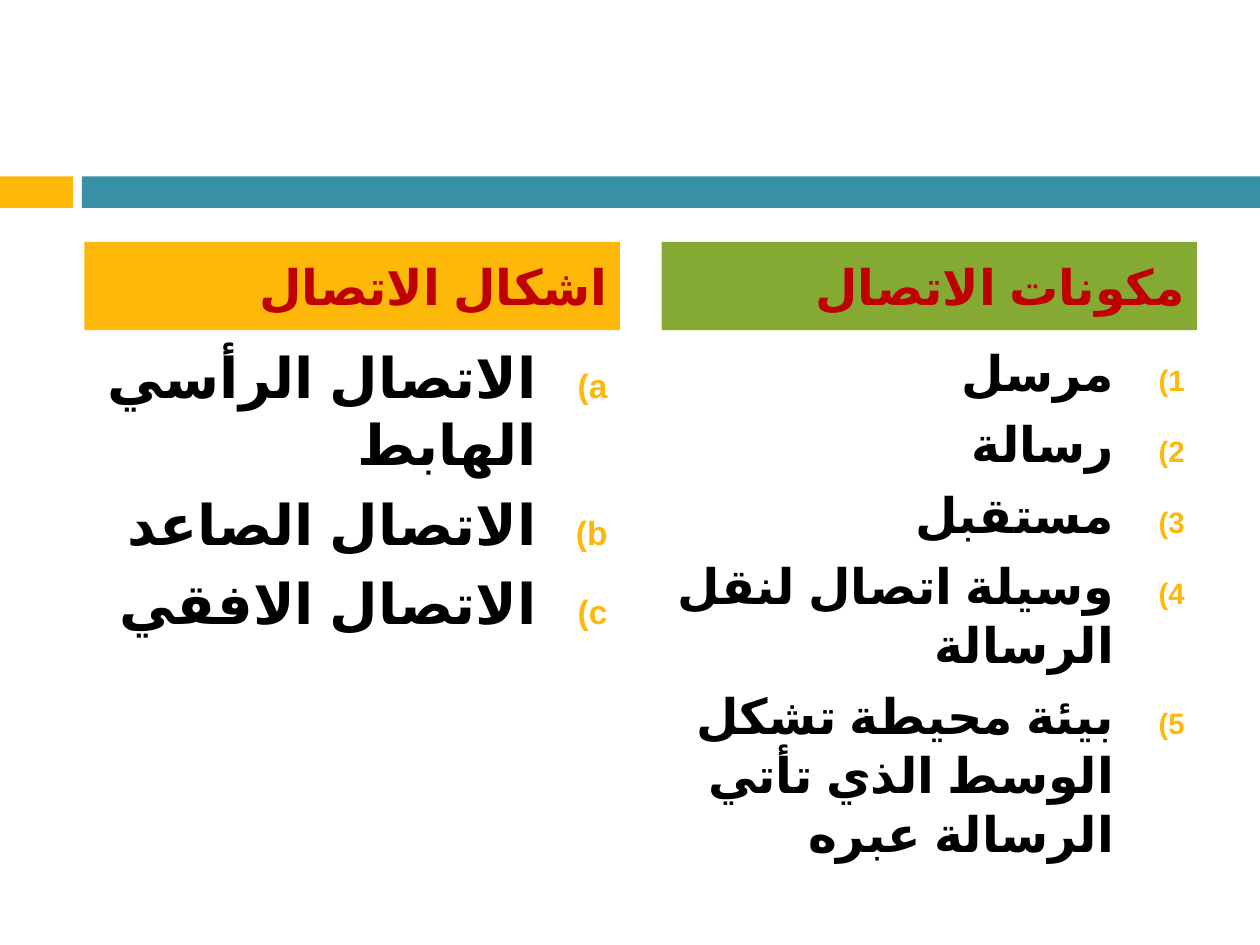
from dataclasses import dataclass

from lxml.etree import SubElement
from pptx import Presentation
from pptx.dml.color import RGBColor
from pptx.enum.lang import MSO_LANGUAGE_ID
from pptx.enum.shapes import MSO_SHAPE
from pptx.enum.text import MSO_ANCHOR, PP_ALIGN
from pptx.oxml.ns import qn
from pptx.util import Inches, Pt

COLORS = {
    "amber": "FEB80A",
    "teal": "3891A7",
    "green": "84AA33",
    "red": "C00000",
    "black": "000000",
}
COLUMN_WIDTH = 4.25
BAND_TOP, BAND_HEIGHT = 1.4, 0.25
HEADER_TOP, HEADER_HEIGHT = 1.92, 0.7
LIST_TOP, LIST_HEIGHT = 2.67, 3.92
LIST_INDENT = 0.56


@dataclass
class Column:
    left: float
    header: str
    fill: str
    numbering: str
    size: int
    items: list[str]


COLUMNS = [
    Column(0.67, "اشكال الاتصال", "amber", "alphaLcParenR", 32, [
        "الاتصال الرأسي الهابط",
        "الاتصال الصاعد",
        "الاتصال الافقي",
    ]),
    Column(5.25, "مكونات الاتصال", "green", "arabicParenR", 28, [
        "مرسل",
        "رسالة",
        "مستقبل",
        "وسيلة اتصال لنقل الرسالة",
        "بيئة محيطة تشكل الوسط الذي تأتي الرسالة عبره",
    ]),
]


def add_bar(page, left: float, top: float, width: float, height: float, fill: str):
    bar = page.shapes.add_shape(MSO_SHAPE.RECTANGLE, Inches(left), Inches(top),
                                Inches(width), Inches(height))
    bar.shadow.inherit = False
    bar.fill.solid()
    bar.fill.fore_color.rgb = RGBColor.from_string(COLORS[fill])
    bar.line.fill.background()
    return bar


def write_arabic(para, text: str, size: int, font: str, color: str) -> None:
    """Write a bold, right-to-left paragraph."""
    para.text = text
    para.alignment = PP_ALIGN.RIGHT
    para.space_before = Pt(7)
    para.font.name = font
    para.font.size = Pt(size)
    para.font.bold = True
    para.font.color.rgb = RGBColor.from_string(COLORS[color])
    properties = para._p.get_or_add_pPr()
    properties.set("rtl", "1")
    # Arabic letters take the complex-script font and language
    SubElement(properties.find(qn("a:defRPr")), qn("a:cs"), typeface="Arial")
    for span in para.runs:
        span.font.language_id = MSO_LANGUAGE_ID.ARABIC


def number_paragraph(para, numbering: str) -> None:
    """Give the paragraph a hanging amber number or letter."""
    properties = para._p.get_or_add_pPr()
    properties.set("marL", str(Inches(LIST_INDENT)))
    properties.set("indent", str(-Inches(LIST_INDENT)))
    color = SubElement(properties, qn("a:buClr"))
    SubElement(color, qn("a:srgbClr"), val=COLORS["amber"])
    size = SubElement(properties, qn("a:buSzPct"), val="60000")
    number = SubElement(properties, qn("a:buAutoNum"), type=numbering)
    # Bullet settings come before the default run properties
    defaults = properties.find(qn("a:defRPr"))
    for element in (color, size, number):
        defaults.addprevious(element)


def add_header(page, column: Column) -> None:
    header = add_bar(page, column.left, HEADER_TOP, COLUMN_WIDTH, HEADER_HEIGHT, column.fill)
    header.text_frame.vertical_anchor = MSO_ANCHOR.MIDDLE
    write_arabic(header.text_frame.paragraphs[0], column.header, 28,
                 "TeX Gyre Adventor", "red")


def add_list(page, column: Column) -> None:
    box = page.shapes.add_textbox(Inches(column.left), Inches(LIST_TOP),
                                  Inches(COLUMN_WIDTH), Inches(LIST_HEIGHT))
    frame = box.text_frame
    frame.word_wrap = True
    for index, item in enumerate(column.items):
        para = frame.add_paragraph() if index else frame.paragraphs[0]
        write_arabic(para, item, column.size, "Arial", "black")
        number_paragraph(para, column.numbering)


def main() -> None:
    deck = Presentation()
    deck.slide_width, deck.slide_height = Inches(10), Inches(7.5)
    page = deck.slides.add_slide(deck.slide_layouts[6])

    # Band under the empty title area
    add_bar(page, 0, BAND_TOP, 0.58, BAND_HEIGHT, "amber")
    add_bar(page, 0.65, BAND_TOP, 9.35, BAND_HEIGHT, "teal")

    # Two columns, each a header over a numbered list
    for column in COLUMNS:
        add_list(page, column)
        add_header(page, column)

    deck.save("out.pptx")


if __name__ == "__main__":
    main()
